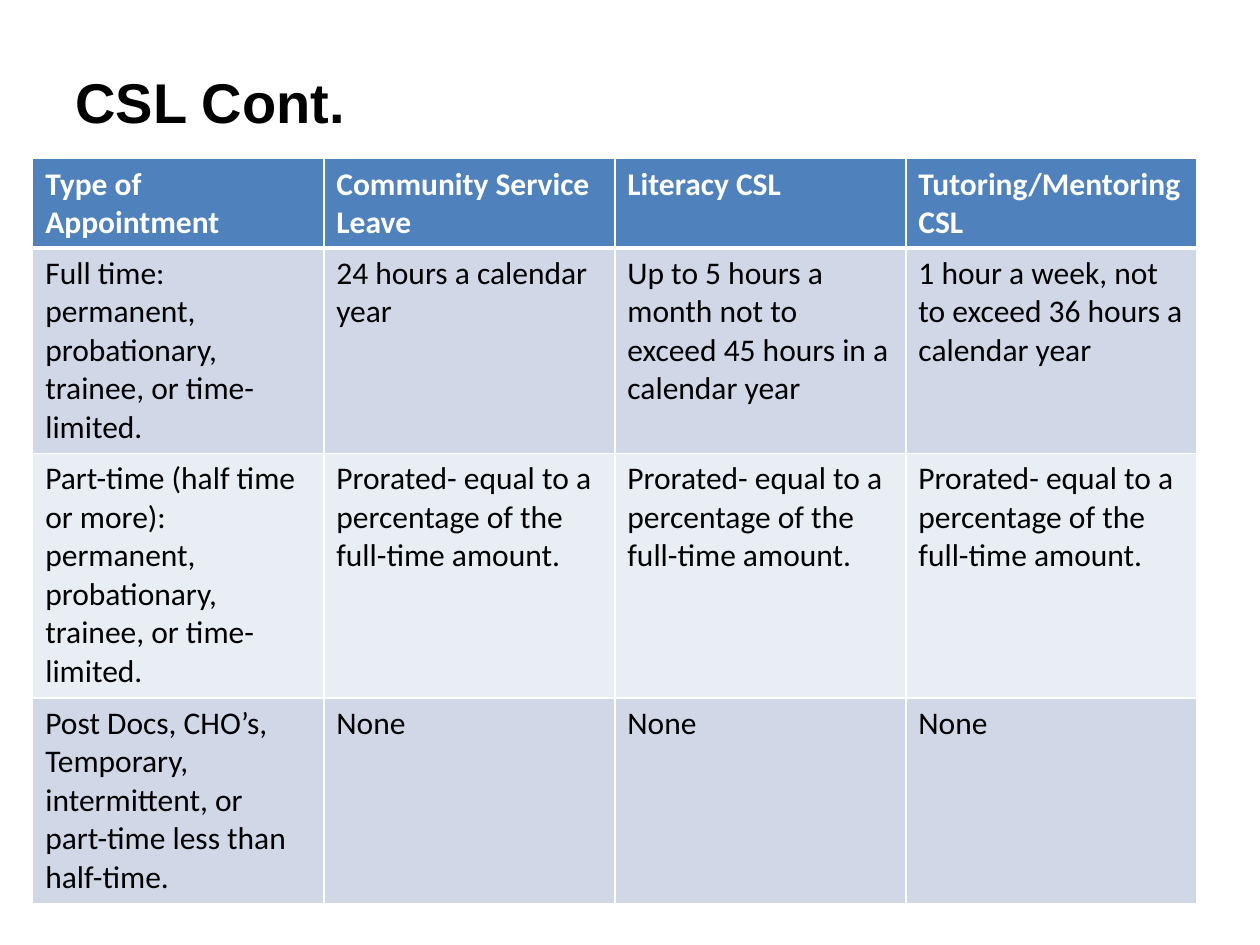
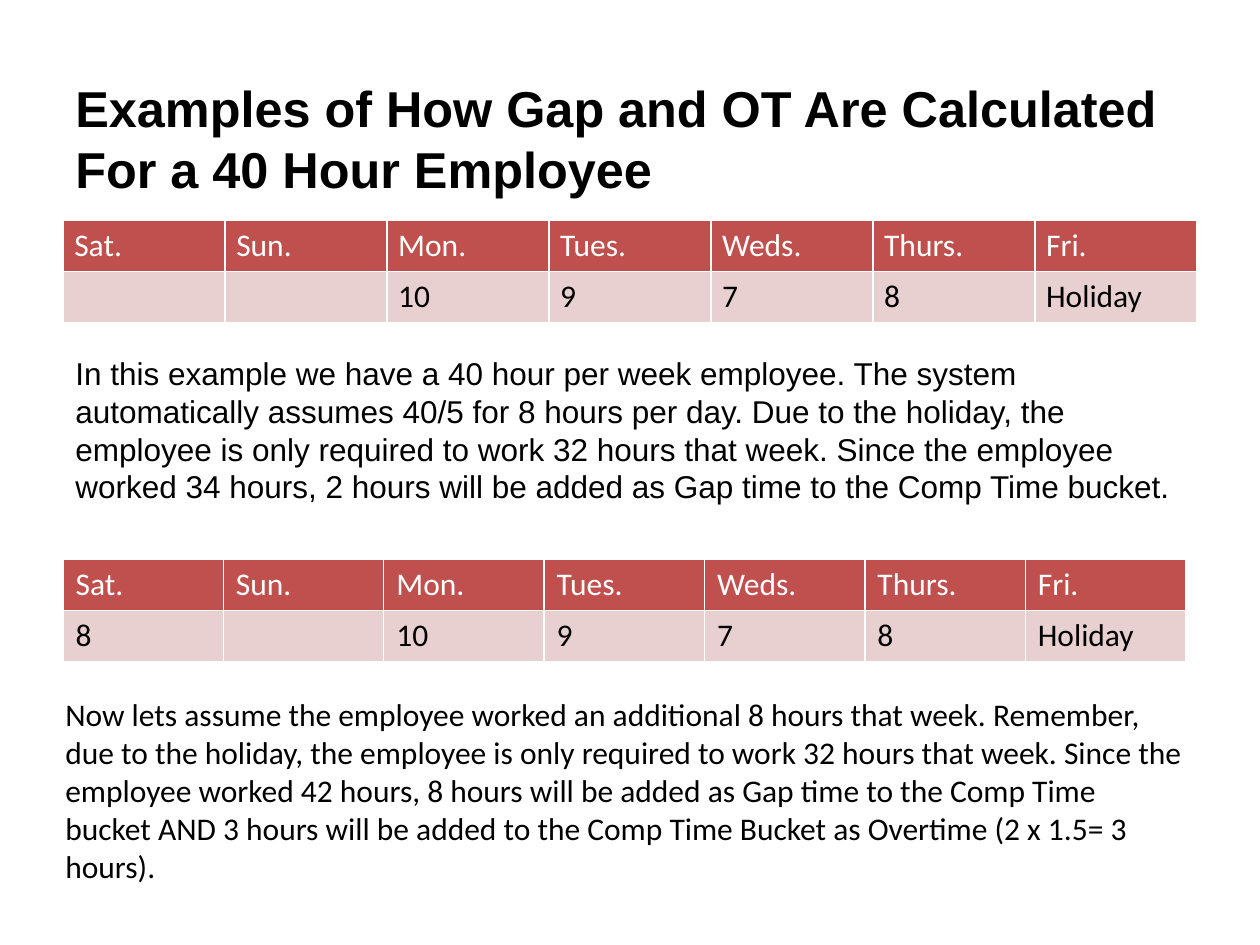
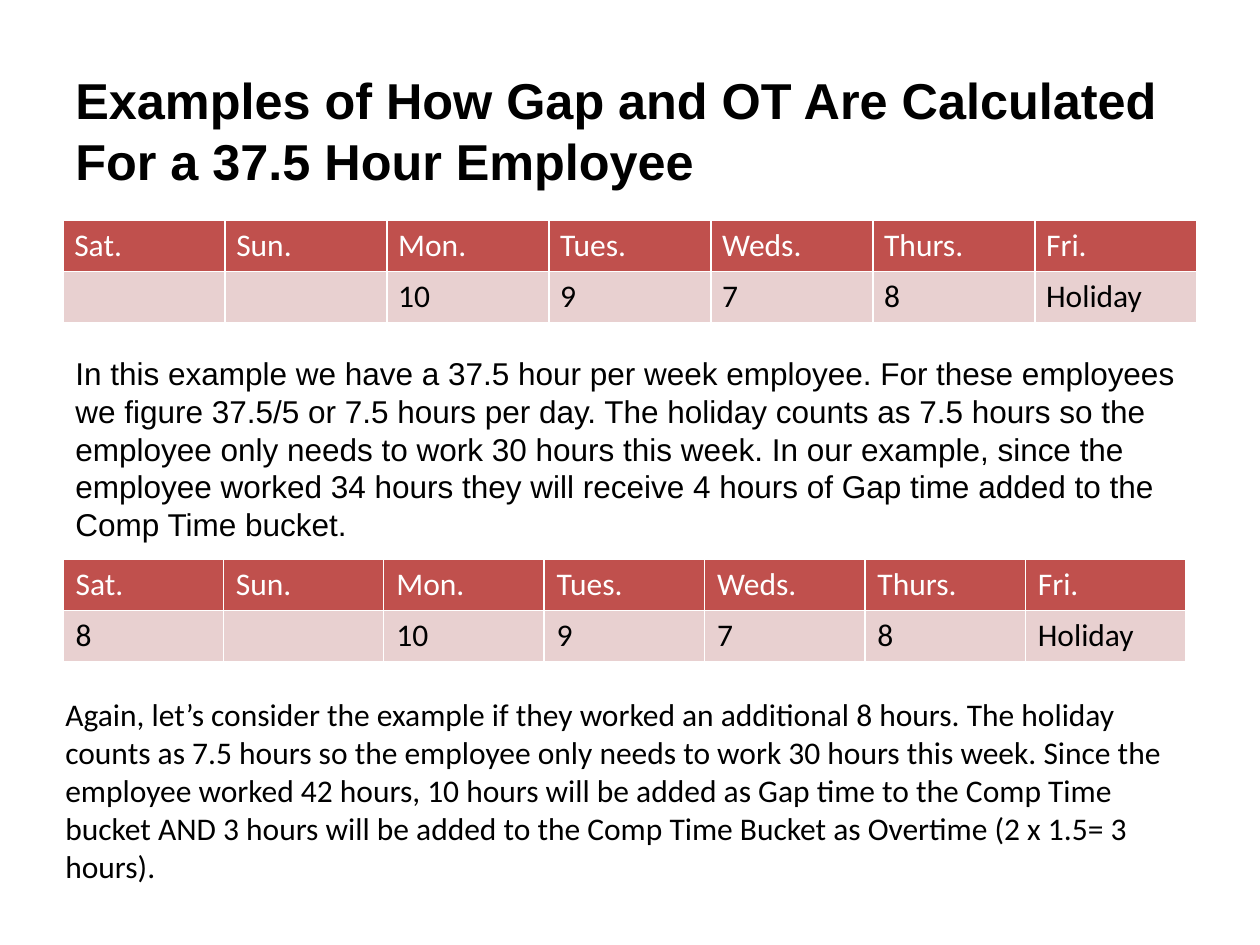
from lxml import etree
from pptx import Presentation
from pptx import util as u
from pptx.dml.color import RGBColor
from pptx.enum import text
from pptx.oxml import ns

BLACK, WHITE = "000000", "FFFFFF"
BLUE = ("4F81BD", "D0D8E8", "E9EDF4")
RED = ("C0504D", "E8D0D0", "E8D0D0")
DAYS = ["Sat.", "Sun.", "Mon.", "Tues.", "Weds.", "Thurs.", "Fri."]
SHIFTS = ["10", "9", "7", "8", "Holiday"]
PRORATED = "Prorated- equal to a percentage of the full-time amount."
LEAVE = [
    ["Type of Appointment", "Community Service Leave", "Literacy CSL",
     "Tutoring/Mentoring CSL"],
    ["Full time: permanent, probationary, trainee, or time-limited.",
     "24 hours a calendar year",
     "Up to 5 hours a month not to exceed 45 hours in a calendar year",
     "1 hour a week, not to exceed 36 hours a calendar year"],
    ["Part-time (half time or more): permanent, probationary, trainee, or time-limited."]
    + [PRORATED] * 3,
    ["Post Docs, CHO’s, Temporary, intermittent, or part-time less than half-time."]
    + ["None"] * 3,
]
CASES = [
    ("40", 2.26,
     "In this example we have a 40 hour per week employee. The system automatically "
     "assumes 40/5 for 8 hours per day. Due to the holiday, the employee is only "
     "required to work 32 hours that week. Since the employee worked 34 hours, 2 hours "
     "will be added as Gap time to the Comp Time bucket.",
     "Now lets assume the employee worked an additional 8 hours that week. Remember, "
     "due to the holiday, the employee is only required to work 32 hours that week. "
     "Since the employee worked 42 hours, 8 hours will be added as Gap time to the "
     "Comp Time bucket AND 3 hours will be added to the Comp Time Bucket as Overtime "
     "(2 x 1.5= 3 hours)."),
    ("37.5", 2,
     "In this example we have a 37.5 hour per week employee. For these employees we "
     "figure 37.5/5 or 7.5 hours per day. The holiday counts as 7.5 hours so the "
     "employee only needs to work 30 hours this week. In our example, since the "
     "employee worked 34 hours they will receive 4 hours of Gap time added to the Comp "
     "Time bucket.",
     "Again, let’s consider the example if they worked an additional 8 hours. The "
     "holiday counts as 7.5 hours so the employee only needs to work 30 hours this "
     "week. Since the employee worked 42 hours, 10 hours will be added as Gap time to "
     "the Comp Time bucket AND 3 hours will be added to the Comp Time Bucket as "
     "Overtime (2 x 1.5= 3 hours)."),
]


def paint(code):
    return RGBColor.from_string(code)


class Deck:
    head, body, size = "Arial", "Calibri", 18
    cols, rows = 20, 15

    def __init__(self):
        self.prs = Presentation()
        self.prs.slide_width = u.Inches(10)
        self.prs.slide_height = u.Inches(7.5)

    def page(self):
        self.slide = self.prs.slides.add_slide(self.prs.slide_layouts[6])

    def across(self, n):
        return round(self.prs.slide_width * n / self.cols)

    def down(self, n):
        return round(self.prs.slide_height * n / self.rows)

    def place(self, col, row, wide, high):
        return self.across(col), self.down(row), self.across(wide), self.down(high)

    def letter(self, frame, words, face, size, color=BLACK, bold=False):
        frame.text = words
        for run in frame.paragraphs[0].runs:
            font = run.font
            font.name, font.size, font.bold = face, u.Pt(size), bold
            font.color.rgb = paint(color)

    def note(self, words, area, face):
        frame = self.slide.shapes.add_textbox(*self.place(*area)).text_frame
        frame.word_wrap = True
        self.letter(frame, words, face, self.size)
        return frame

    def title(self, words, row, high, size):
        frame = self.note(words, (1, row, 18, high), self.head)
        frame.vertical_anchor = text.MSO_ANCHOR.MIDDLE
        frame.paragraphs[0].alignment = text.PP_ALIGN.CENTER
        self.letter(frame, words, self.head, size, bold=True)

    def edge(self, cell, side, width):
        line = etree.SubElement(cell._tc.get_or_add_tcPr(), ns.qn("a:ln" + side),
                                w=str(u.Pt(width)))
        fill = etree.SubElement(line, ns.qn("a:solidFill"))
        etree.SubElement(fill, ns.qn("a:srgbClr"), val=WHITE)

    def table(self, data, col, row, wide, highs, tones, rule=1, bold=False, pad=0.1):
        area = self.place(col, row, wide, sum(highs))
        grid = self.slide.shapes.add_table(len(data), len(data[0]), *area).table
        for part in grid.columns:
            part.width = self.across(wide / len(data[0]))
        for i, (part, high, line) in enumerate(zip(grid.rows, highs, data)):
            part.height = self.down(high)
            tone = tones[0] if i == 0 else tones[2 - i % 2]
            for cell, words in zip(part.cells, line):
                cell.margin_left = cell.margin_right = u.Inches(pad)
                for side in "LRTB":
                    thick = (i, side) in ((0, "B"), (1, "T"))
                    self.edge(cell, side, rule if thick else 1)
                cell.fill.solid()
                cell.fill.fore_color.rgb = paint(tone)
                self.letter(cell.text_frame, words, self.body, self.size,
                            BLACK if i else WHITE, bold and i == 0)

    def week(self, first, row, wide, pad):
        self.table([DAYS, [first, ""] + SHIFTS], 1, row, wide, [0.81] * 2, RED, pad=pad)


def main():
    deck = Deck()
    deck.page()
    deck.title("CSL Cont. ", 1.02, 1.16, 32)
    deck.table(LEAVE, 0.52, 2.52, 18.48, [1.42, 3.26, 3.88, 3.26], BLUE, rule=3, bold=True)
    for hours, high, first, then in CASES:
        deck.page()
        deck.title(f"Examples of How Gap and OT Are Calculated For a {hours} Hour Employee",
                   1.06, high, 28.8)
        deck.week("", 3.5, 18, 0.09)
        deck.note(first, (1, 5.52, 18, 2.98), deck.head)
        deck.week("8", 8.88, 17.82, 0.1)
        deck.note(then, (0.84, 10.94, 18.16, 3.24), deck.body)
    deck.prs.save("out.pptx")


if __name__ == "__main__":
    main()
